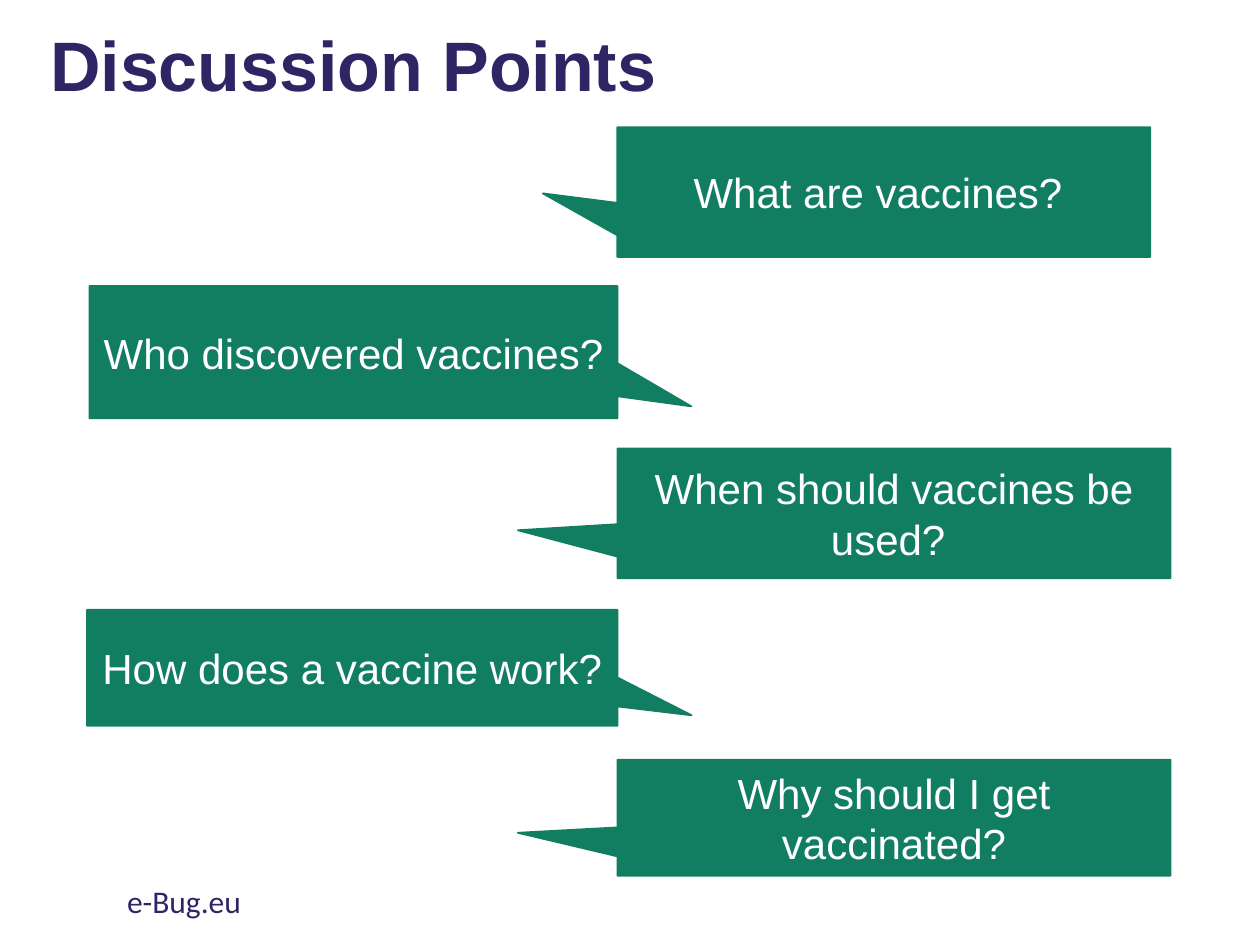
from pptx import Presentation
from pptx.dml.color import RGBColor
from pptx.enum.shapes import MSO_SHAPE
from pptx.enum.text import MSO_ANCHOR, PP_ALIGN
from pptx.util import Inches, Pt

GREEN = RGBColor(0x11, 0x7E, 0x62)
INDIGO = RGBColor(0x30, 0x25, 0x64)
WHITE = RGBColor(0xFF, 0xFF, 0xFF)

# Question, box (left, top, width, height), tip of the tail as a share of the box
QUESTIONS = [
    ("What are vaccines? ", (4.9, 1.01, 4.23, 1.03), (-0.64, 0.01)),
    ("Who discovered vaccines? ", (0.71, 2.27, 4.19, 1.05), (0.64, 0.41)),
    ("When should vaccines be used? ", (4.9, 3.56, 4.39, 1.03), (-0.68, 0.13)),
    ("How does a vaccine work?", (0.69, 4.84, 4.21, 0.92), (0.64, 0.41)),
    ("Why should I get vaccinated?", (4.9, 6.03, 4.39, 0.92), (-0.68, 0.13)),
]


def write_line(frame, text, size, color, font="Arial", bold=False):
    frame.word_wrap = True
    paragraph = frame.paragraphs[0]
    run = paragraph.add_run()
    run.text = text
    run.font.name = font
    run.font.size = Pt(size)
    run.font.bold = bold
    run.font.color.rgb = color
    return paragraph


def add_title(slide, box):
    frame = slide.shapes.add_textbox(*map(Inches, box)).text_frame
    frame.vertical_anchor = MSO_ANCHOR.MIDDLE
    heading = write_line(frame, "Discussion Points", 40, INDIGO, bold=True)
    heading.line_spacing = 0.9


def add_question(slide, question, box, tail):
    bubble = slide.shapes.add_shape(MSO_SHAPE.RECTANGULAR_CALLOUT, *map(Inches, box))
    bubble.shadow.inherit = False
    bubble.adjustments[0], bubble.adjustments[1] = tail
    bubble.fill.solid()
    bubble.fill.fore_color.rgb = GREEN
    bubble.line.color.rgb = GREEN
    bubble.line.width = Pt(1)
    bubble.text_frame.vertical_anchor = MSO_ANCHOR.MIDDLE
    write_line(bubble.text_frame, question, 24, WHITE).alignment = PP_ALIGN.CENTER


def add_footer(slide, box):
    frame = slide.shapes.add_textbox(*map(Inches, box)).text_frame
    write_line(frame, "e-Bug.eu", 18, INDIGO, font="Calibri")


def main():
    deck = Presentation()
    deck.slide_width, deck.slide_height = Inches(10), Inches(7.5)
    slide = deck.slides.add_slide(deck.slide_layouts[6])

    add_title(slide, (0.3, -0.18, 7.67, 1.45))
    for question, box, tail in QUESTIONS:
        add_question(slide, question, box, tail)
    add_footer(slide, (0.91, 6.95, 3.38, 0.4))

    deck.save("out.pptx")


if __name__ == "__main__":
    main()
